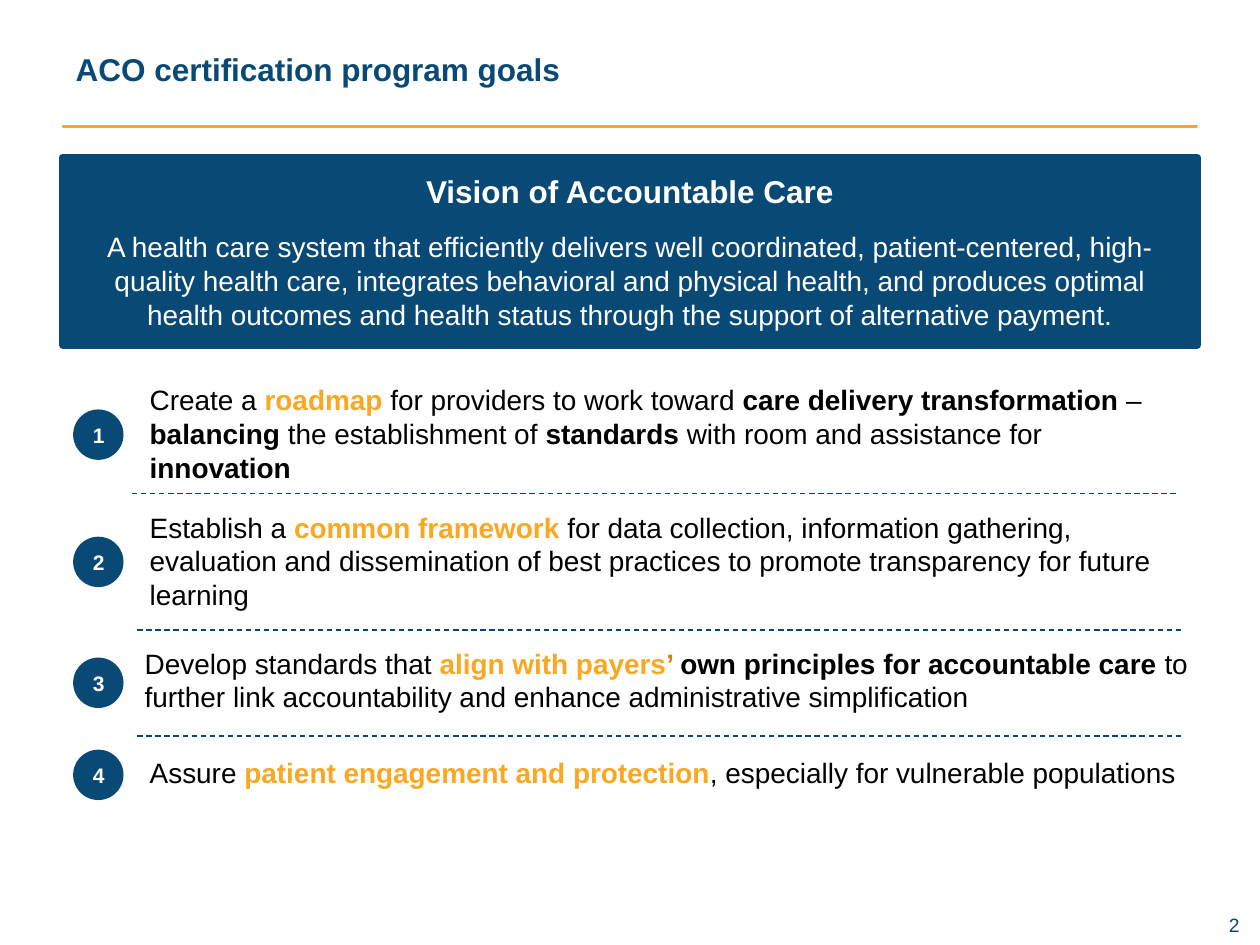
"""Build the ACO certification program goals slide."""
from dataclasses import dataclass

from lxml.etree import SubElement
from pptx import Presentation
from pptx.dml.color import RGBColor
from pptx.enum.dml import MSO_LINE
from pptx.enum.shapes import MSO_CONNECTOR, MSO_SHAPE
from pptx.enum.text import MSO_ANCHOR, MSO_AUTO_SIZE, PP_ALIGN
from pptx.oxml.ns import qn
from pptx.util import Pt


@dataclass(frozen=True)
class Theme:
    font: str = "Arial"
    navy: str = "094975"
    divider: str = "064875"
    gold: str = "FAA721"
    amber: str = "D08205"
    black: str = "000000"
    white: str = "FFFFFF"
    heading: int = 18
    body: int = 16
    badge: int = 12
    number: int = 11


T = Theme()
BOLD = {"bold": True}
KEY = {"bold": True, "color": T.gold}
BADGE_LEFT, BADGE_SIZE = 41.8, 28.8
DIVIDER_WIDTH = 597.6

GOALS = [
    (78.5, 215.3, 597.6, 65.5, 234, [
        ("Create a ", {}), ("roadmap ", KEY), ("for providers to work toward ", {}),
        ("care delivery transformation ", BOLD), ("– ", {}), ("balancing", BOLD),
        (" the establishment of ", {}), ("standards ", BOLD),
        ("with room and assistance for ", {}), ("innovation", BOLD)]),
    (78.5, 288, 612, 70.6, 306.7, [
        ("Establish a ", {}), ("common framework ", KEY),
        ("for data collection, information gathering, evaluation and dissemination "
         "of best practices to promote transparency for future learning", {})]),
    (75.6, 365.8, 612, 77.8, 375.8, [
        ("Develop standards that ", {}), ("align with payers", KEY),
        ("’ ", {"bold": True, "color": T.amber}),
        ("own principles for accountable care ", BOLD),
        ("to further link accountability and enhance administrative simplification", {})]),
    (78.5, 428.4, 612, 42.5, 428.4, [
        ("Assure ", {}), ("patient engagement and protection", KEY),
        (", especially for vulnerable populations", {})]),
]
DIVIDERS = [(75.6, 282.2), (78.5, 360), (78.5, 420.5)]
VISION = ("A health care system that efficiently delivers well coordinated, patient-centered, "
          "high-quality health care, integrates behavioral and physical health, and produces "
          "optimal health outcomes and health status through the support of alternative payment.")


def add_text(p, text, size=T.body, color=T.black, bold=False):
    """Append a formatted run to a paragraph."""
    r = p.add_run()
    r.text = text
    r.font.name = T.font
    r.font.size = Pt(size)
    r.font.bold = bold
    r.font.color.rgb = RGBColor.from_string(color)


def add_box(s, left, top, width, height, inset=None):
    """Add a wrapping text box and return its text frame."""
    tf = s.shapes.add_textbox(Pt(left), Pt(top), Pt(width), Pt(height)).text_frame
    tf.word_wrap = True
    if inset is not None:
        tf.margin_left = tf.margin_right = tf.margin_top = tf.margin_bottom = Pt(inset)
    return tf


def add_filled(s, kind, left, top, width, height, fill, line_width=0):
    """Add a solid shape with an optional outline of the same colour."""
    sp = s.shapes.add_shape(kind, Pt(left), Pt(top), Pt(width), Pt(height))
    sp.shadow.inherit = False
    sp.fill.solid()
    sp.fill.fore_color.rgb = RGBColor.from_string(fill)
    if line_width:
        sp.line.color.rgb = RGBColor.from_string(fill)
        sp.line.width = Pt(line_width)
    else:
        sp.line.fill.background()
    sp.text_frame.word_wrap = True
    sp.text_frame.vertical_anchor = MSO_ANCHOR.MIDDLE
    return sp


def add_title(s, text):
    """Place and fill the title placeholder."""
    sp = s.shapes.title
    sp.left, sp.top, sp.width, sp.height = Pt(36), Pt(12.2), Pt(648), Pt(54)
    tf = sp.text_frame
    tf.auto_size = MSO_AUTO_SIZE.NONE
    tf.vertical_anchor = MSO_ANCHOR.MIDDLE
    p = tf.paragraphs[0]
    p.alignment = PP_ALIGN.LEFT
    add_text(p, text, size=T.heading, color=T.navy, bold=True)


def add_vision(s):
    """Add the vision banner with its heading and statement."""
    sp = add_filled(s, MSO_SHAPE.RECTANGLE, 36, 90, 648, 107.3, T.navy, 4.5)
    heading = sp.text_frame.paragraphs[0]
    statement = sp.text_frame.add_paragraph()
    statement.space_before = Pt(11.5)
    heading.alignment = statement.alignment = PP_ALIGN.CENTER
    add_text(heading, "Vision of Accountable Care", size=T.heading, color=T.white, bold=True)
    add_text(statement, VISION, color=T.white)


def add_divider(s, left, top):
    """Add a dashed line between two goals."""
    line = s.shapes.add_connector(MSO_CONNECTOR.STRAIGHT, Pt(left), Pt(top),
                                  Pt(left + DIVIDER_WIDTH), Pt(top))
    line.line.color.rgb = RGBColor.from_string(T.divider)
    line.line.width = Pt(0.75)
    line.line.dash_style = MSO_LINE.DASH
    SubElement(line._element.spPr, qn("a:effectLst"))


def add_goal(s, number, left, top, width, height, badge_top, runs):
    """Add one goal statement with its numbered badge."""
    p = add_box(s, left, top, width, height).paragraphs[0]
    for text, style in runs:
        add_text(p, text, **style)
    badge = add_filled(s, MSO_SHAPE.OVAL, BADGE_LEFT, badge_top, BADGE_SIZE, BADGE_SIZE, T.navy)
    p = badge.text_frame.paragraphs[0]
    p.alignment = PP_ALIGN.CENTER
    add_text(p, str(number), size=T.badge, color=T.white, bold=True)


def add_page_number(s, number):
    """Add the right-aligned page number."""
    p = add_box(s, 534.2, 522, 174.2, 13.7, inset=0).paragraphs[0]
    p.alignment = PP_ALIGN.RIGHT
    add_text(p, str(number), size=T.number, color=T.navy)


def main():
    """Build and save the slide."""
    prs = Presentation()
    prs.slide_width, prs.slide_height = Pt(720), Pt(540)
    s = prs.slides.add_slide(prs.slide_layouts[5])
    add_title(s, "ACO certification program goals")
    add_filled(s, MSO_SHAPE.RECTANGLE, 36, 72, 648, 0.7, T.gold, 1)
    add_vision(s)
    for number, goal in enumerate(GOALS, 1):
        add_goal(s, number, *goal)
    for left, top in DIVIDERS:
        add_divider(s, left, top)
    add_page_number(s, 2)
    prs.save("out.pptx")


if __name__ == "__main__":
    main()
